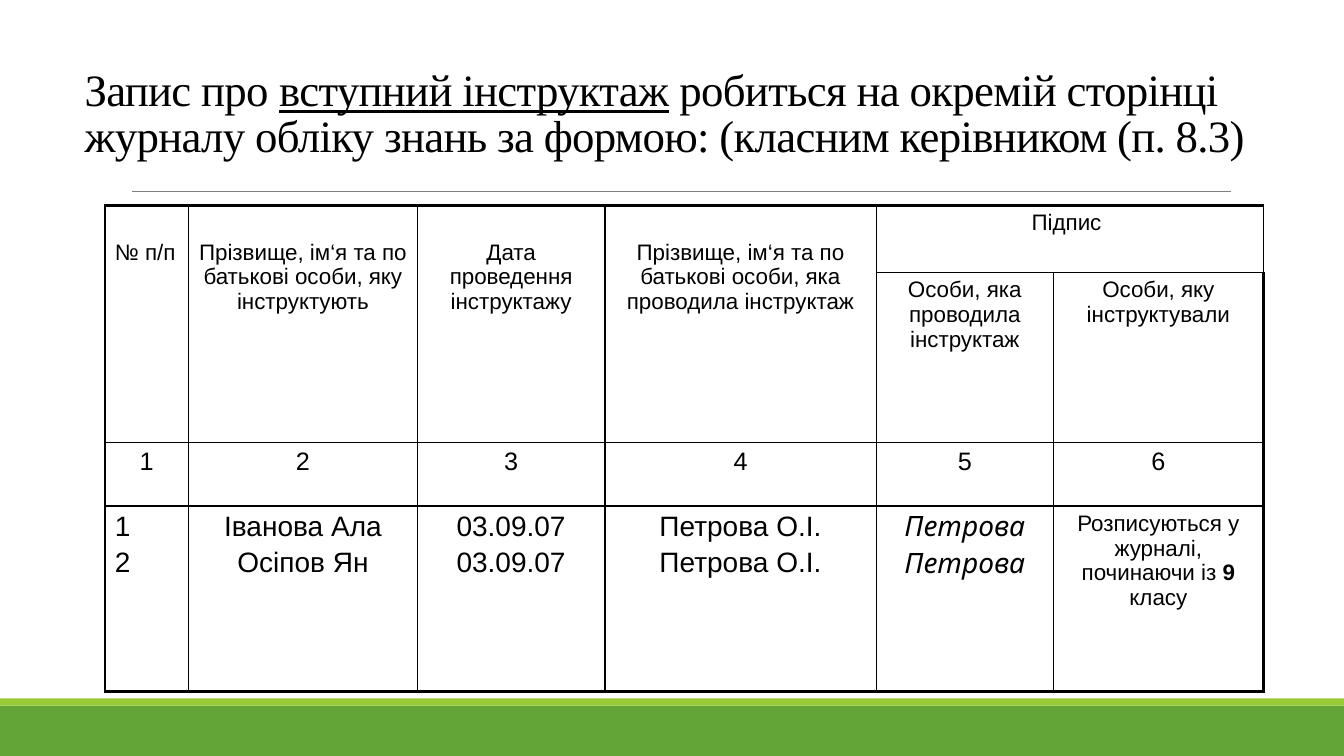
from lxml import etree
from pptx import Presentation
from pptx import util as u
from pptx.dml.color import RGBColor
from pptx.enum import shapes, text
from pptx.oxml.ns import qn

WIDTH, HEIGHT = 13.33, 7.5
BLACK, GREEN, LIME, GRAY = "000000", "63A537", "99CB38", "808080"
COLUMNS = [0.83, 2.27, 1.86, 2.69, 1.76, 2.08]
ROWS = [0.66, 1.69, 0.63, 1.84]
THIN, THICK = 1, 2.25
LEFT, CENTER = text.PP_ALIGN.LEFT, text.PP_ALIGN.CENTER

PERSON_HEADINGS = [
    "№ п/п",
    "Прізвище, ім‘я та по батькові особи, яку інструктують",
    "Дата проведення інструктажу",
    "Прізвище, ім‘я та по батькові особи, яка проводила інструктаж",
]
SIGNATURE_HEADINGS = ["Особи, яка проводила інструктаж", "Особи, яку інструктували"]
ENTRIES = [
    ["1", "Іванова Ала", "03.09.07", "Петрова О.І.", "Петрова"],
    ["2", "Осіпов Ян", "03.09.07", "Петрова О.І.", "Петрова"],
]


def color(value):
    return RGBColor.from_string(value)


def add_band(slide, top, height, fill):
    """Full-width strip of plain colour."""
    band = slide.shapes.add_shape(shapes.MSO_SHAPE.RECTANGLE, 0, u.Inches(top),
                                  u.Inches(WIDTH), u.Inches(height))
    band.shadow.inherit = False
    band.fill.solid()
    band.fill.fore_color.rgb = color(fill)
    band.line.fill.background()


def add_rule(slide, left, right, top):
    rule = slide.shapes.add_connector(shapes.MSO_CONNECTOR.STRAIGHT, u.Inches(left),
                                      u.Inches(top), u.Inches(right), u.Inches(top))
    rule.line.color.rgb = color(GRAY)
    rule.line.width = u.Pt(0.5)
    etree.SubElement(rule._element.spPr, qn("a:effectLst"))


def style_font(font, size, name="Arial", italic=False):
    font.size = u.Pt(size)
    font.name = name
    font.italic = italic
    font.color.rgb = color(BLACK)


def add_title(slide, parts):
    """Title from (text, underlined) parts."""
    box = slide.shapes.add_textbox(u.Inches(0.74), u.Inches(0.32),
                                   u.Inches(WIDTH - 0.74), u.Inches(1.33))
    frame = box.text_frame
    frame.word_wrap = True
    frame.vertical_anchor = text.MSO_ANCHOR.BOTTOM
    paragraph = frame.paragraphs[0]
    paragraph.line_spacing = 0.85
    style_font(paragraph.font, 32, "Times New Roman")
    for words, underlined in parts:
        run = paragraph.add_run()
        run.text = words
        run.font.underline = underlined
        run._r.get_or_add_rPr().set("spc", "-50")


def set_borders(cell, widths):
    """Black borders; widths run left, right, top, bottom."""
    properties = cell._tc.get_or_add_tcPr()
    for side, width in zip("LRTB", widths):
        line = etree.SubElement(properties, qn(f"a:ln{side}"), w=str(u.Pt(width)))
        fill = etree.SubElement(line, qn("a:solidFill"))
        etree.SubElement(fill, qn("a:srgbClr"), val=BLACK)


def add_table(slide, left, top):
    frame = slide.shapes.add_table(len(ROWS), len(COLUMNS), u.Inches(left), u.Inches(top),
                                   u.Inches(sum(COLUMNS)), u.Inches(sum(ROWS)))
    table = frame.table
    table.first_row = table.horz_banding = False
    for column, width in zip(table.columns, COLUMNS):
        column.width = u.Inches(width)
    for row, height in zip(table.rows, ROWS):
        row.height = u.Inches(height)
    last_row, last_column = len(ROWS) - 1, len(COLUMNS) - 1
    for row in range(len(ROWS)):
        for column in range(len(COLUMNS)):
            cell = table.cell(row, column)
            outer = (column == 0, column == last_column, row == 0, row == last_row)
            set_borders(cell, [THICK if edge else THIN for edge in outer])
            cell.fill.background()
    return table


def write_cell(cell, lines, size, align=CENTER, **font):
    """One paragraph per line; a line is a list of (text, bold) parts or a string."""
    frame = cell.text_frame
    for index, line in enumerate(lines):
        paragraph = frame.add_paragraph() if index else frame.paragraphs[0]
        paragraph.alignment = align
        paragraph.space_before = u.Pt(0.18 * size)
        style_font(paragraph.font, size, **font)
        for words, bold in [(line, False)] if isinstance(line, str) else line:
            run = paragraph.add_run()
            run.text = words
            run.font.bold = bold


def fill_journal(table):
    for column, heading in enumerate(PERSON_HEADINGS):
        cell = table.cell(0, column)
        cell.merge(table.cell(1, column))
        cell.margin_top = u.Inches(0.34)
        write_cell(cell, [heading], 16, CENTER if column else LEFT)

    signature = table.cell(0, 4)
    signature.merge(table.cell(0, 5))
    write_cell(signature, ["Підпис "], 16)
    for column, heading in enumerate(SIGNATURE_HEADINGS, start=4):
        write_cell(table.cell(1, column), [heading], 16)

    for column in range(len(COLUMNS)):
        write_cell(table.cell(2, column), [str(column + 1)], 18)

    for column, values in enumerate(zip(*ENTRIES)):
        signed = {"name": "Comic Neue", "italic": True} if column == 4 else {}
        write_cell(table.cell(3, column), values, 20, CENTER if column else LEFT, **signed)
    note = [("Розписуються у журналі, починаючи із ", False), ("9 ", True), ("класу", False)]
    write_cell(table.cell(3, 5), [note], 16)


def main():
    presentation = Presentation()
    presentation.slide_width = u.Inches(WIDTH)
    presentation.slide_height = u.Inches(HEIGHT)
    slide = presentation.slides.add_slide(presentation.slide_layouts[6])
    add_band(slide, 7, 0.5, GREEN)
    add_band(slide, 6.93, 0.07, LIME)
    add_rule(slide, 1.31, 12.21, 1.9)
    add_title(slide, [
        ("Запис про ", False),
        ("вступний інструктаж", True),
        (" робиться на окремій сторінці журналу обліку знань за формою: "
         "(класним керівником (п. 8.3)", False),
    ])
    fill_journal(add_table(slide, 1.04, 2.04))
    presentation.save("out.pptx")


if __name__ == "__main__":
    main()
